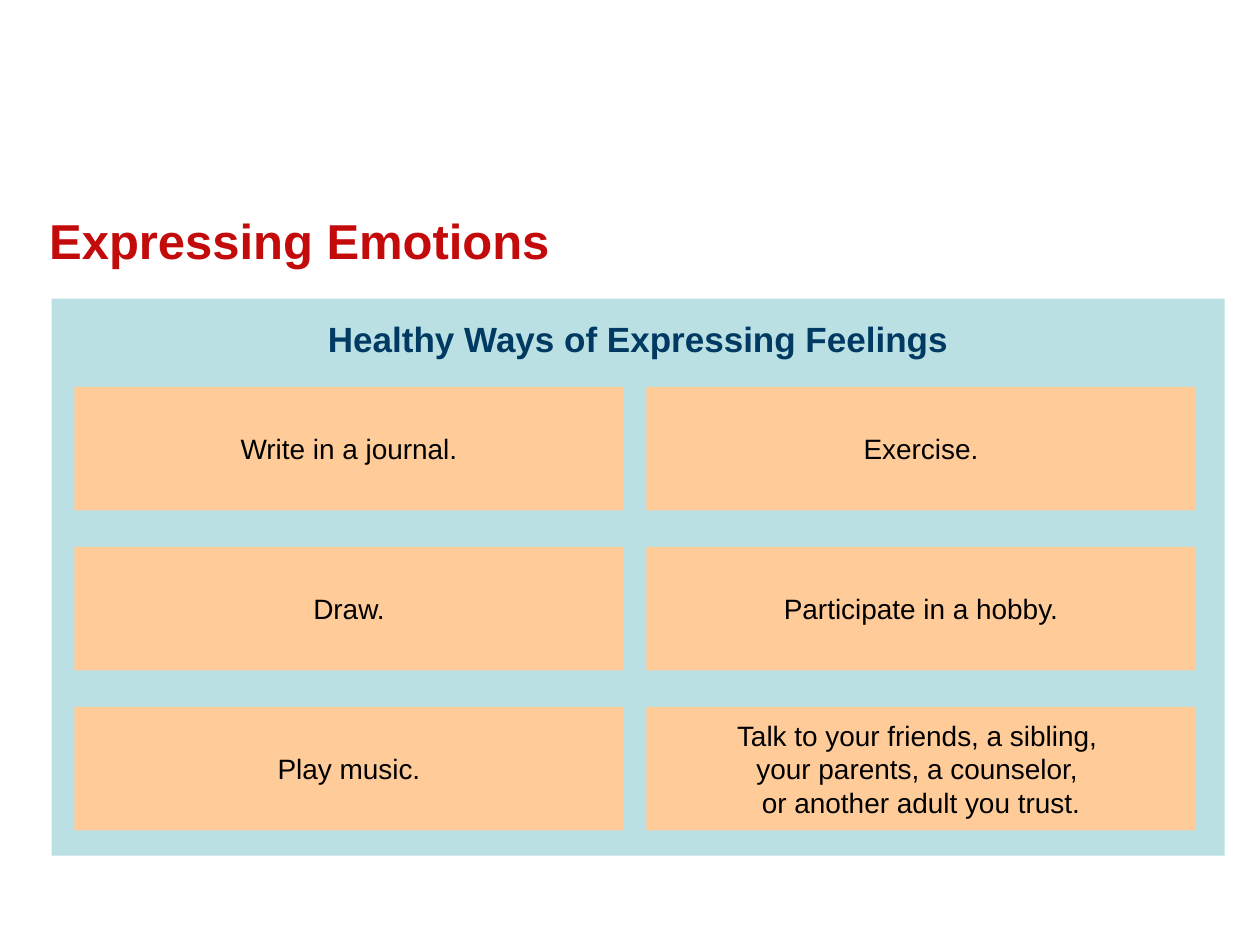
from pptx import Presentation
from pptx.dml.color import RGBColor
from pptx.enum.shapes import MSO_SHAPE as Shape
from pptx.enum.text import MSO_ANCHOR as Anchor, PP_ALIGN as Align
from pptx.util import Inches, Pt

ACTIVITIES = [
    ["Write in a journal.", "Exercise."],
    ["Draw.", "Participate in a hobby."],
    [
        "Play music.",
        "Talk to your friends, a sibling, \nyour parents, a counselor, \nor another adult you trust.",
    ],
]


def color(value):
    return RGBColor.from_string(value)


def write_text(frame, text, size=16, fill="000000", bold=False,
               align=Align.CENTER, anchor=Anchor.MIDDLE, spacing=1.0,
               wrap=True, top=0.05):
    frame.word_wrap = wrap
    frame.vertical_anchor = anchor
    frame.margin_left = frame.margin_right = Inches(0.1)
    frame.margin_top, frame.margin_bottom = Inches(top), Inches(0.05)
    frame.text = text
    for paragraph in frame.paragraphs:
        paragraph.alignment = align
        paragraph.line_spacing = spacing
        paragraph.space_before = Pt(0)
        font = paragraph.font
        font.name = "Arial"
        font.size = Pt(size)
        font.bold = bold
        font.color.rgb = color(fill)


class SlideBuilder:
    title_color = "C30B0B"
    heading_color = "003A62"
    panel_fill = "BBE0E3"
    card_fill = "FFCC99"

    def __init__(self, presentation):
        self.slide = presentation.slides.add_slide(presentation.slide_layouts[5])

    def title(self, text, left, top, width, height):
        shape = self.slide.shapes.title
        shape.left, shape.top = Inches(left), Inches(top)
        shape.width, shape.height = Inches(width), Inches(height)
        write_text(shape.text_frame, text, size=28, fill=self.title_color,
                   bold=True, align=Align.LEFT, spacing=0.9)

    def rectangle(self, left, top, width, height, fill):
        shape = self.slide.shapes.add_shape(
            Shape.RECTANGLE, Inches(left), Inches(top), Inches(width), Inches(height))
        shape.shadow.inherit = False
        shape.fill.solid()
        shape.fill.fore_color.rgb = color(fill)
        shape.line.fill.background()
        return shape

    def panel(self, text, left, top, width, height):
        shape = self.rectangle(left, top, width, height, self.panel_fill)
        write_text(shape.text_frame, text, size=20, fill=self.heading_color,
                   bold=True, anchor=Anchor.TOP, wrap=False, top=0.15)

    def card(self, text, left, top, width, height):
        shape = self.rectangle(left, top, width, height, self.card_fill)
        write_text(shape.text_frame, text)


def main():
    presentation = Presentation()
    presentation.slide_width, presentation.slide_height = Inches(10), Inches(7.5)
    builder = SlideBuilder(presentation)
    builder.title("Expressing Emotions", 0.29, 1.59, 9.33, 0.68)
    builder.panel("Healthy Ways of Expressing Feelings", 0.41, 2.37, 9.31, 4.42)
    for row, activities in enumerate(ACTIVITIES):
        for column, activity in enumerate(activities):
            builder.card(activity, 0.59 + 4.54 * column, 3.07 + 1.27 * row, 4.36, 0.98)
    presentation.save("out.pptx")


if __name__ == "__main__":
    main()
